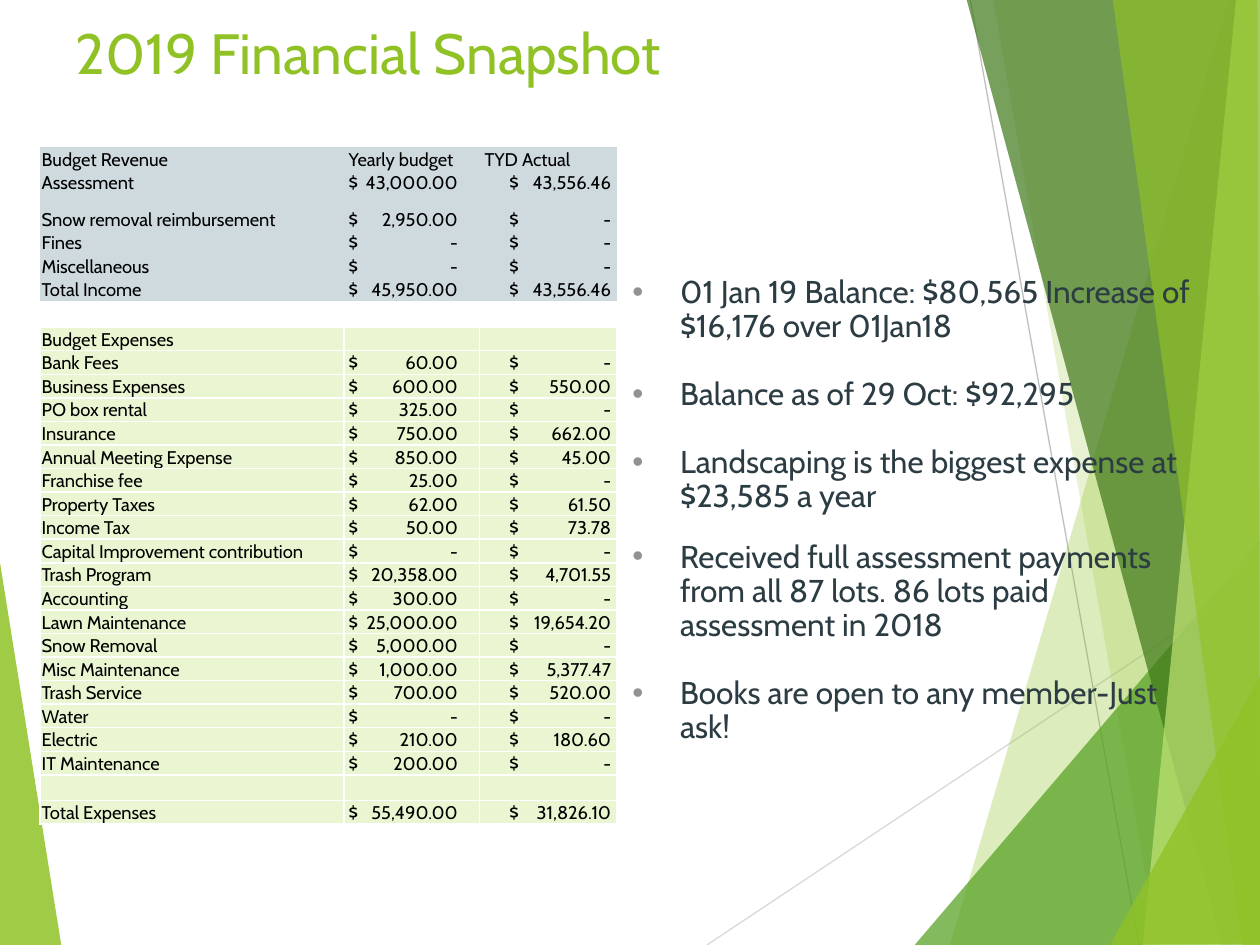
from dataclasses import dataclass

from lxml.etree import SubElement
from pptx import Presentation
from pptx.dml.color import RGBColor
from pptx.enum.shapes import MSO_CONNECTOR
from pptx.enum.text import MSO_ANCHOR
from pptx.oxml.ns import qn
from pptx.util import Cm, Pt


@dataclass(frozen=True)
class Theme:
    font: str = "Cabin"
    title_size: float = 32.4
    body_size: float = 18
    table_size: float = 10.5
    green: str = "90C226"
    mid_green: str = "54A021"
    dark_green: str = "3F7819"
    lime: str = "C0E474"
    slate: str = "2C3C43"
    bullet: str = "929292"
    black: str = "000000"
    white: str = "FFFFFF"
    revenue_fill: str = "CFDADF"
    expense_fill: str = "EAF6D1"
    pale_line: str = "D9D9D9"
    grey_line: str = "BFBFBF"


theme = Theme()


def add_xml(parent, tag, **attributes):
    return SubElement(parent, qn(tag), attributes)


def style_font(paragraph, size, color):
    paragraph.font.name = theme.font
    paragraph.font.size = Pt(size)
    paragraph.font.color.rgb = RGBColor.from_string(color)


presentation = Presentation()
presentation.slide_width, presentation.slide_height = Cm(25.4), Cm(19.05)
slide = presentation.slides.add_slide(presentation.slide_layouts[6])

# Background lines and translucent facets, back to front
background_lines = [
    ((14.25, 19.05), (25.43, 11.61), theme.pale_line),
    ((19.56, 0), (22.96, 19.05), theme.grey_line),
]
for start, end, color in background_lines:
    connector = slide.shapes.add_connector(
        MSO_CONNECTOR.STRAIGHT, *map(Cm, start), *map(Cm, end))
    connector.line.color.rgb = RGBColor.from_string(color)
    connector.line.width = Pt(0.75)
    add_xml(connector._element.spPr, "a:effectLst")

facets = [  # colour, opacity in percent, corners in centimetres
    (theme.green, 85, [(-0.03, 11.15), (1.24, 19.08), (-0.03, 19.05)]),
    (theme.green, 30, [(24.77, 0), (19.15, 19.05), (25.45, 19.08), (25.43, 0.03)]),
    (theme.green, 20, [(20.02, -0.03), (23.34, 19.05), (25.43, 19.05), (25.43, -0.03)]),
    (theme.mid_green, 72, [(18.44, 19.05), (25.4, 10.9), (25.43, 19.05)]),
    (theme.dark_green, 70, [(19.48, -0.03), (24.64, 19.05), (25.43, 19.02), (25.43, -0.03)]),
    (theme.lime, 70, [(24.92, -0.03), (23.04, 19.05), (25.43, 19.05), (25.4, -0.03)]),
    (theme.green, 65, [(22.43, -0.03), (25.04, 19.05), (25.4, 19.05), (25.35, -0.03)]),
    (theme.green, 80, [(22.38, 19.05), (25.43, 13.59), (25.43, 19.02)]),
]
for color, opacity, corners in facets:
    points = [(Cm(x), Cm(y)) for x, y in corners]
    builder = slide.shapes.build_freeform(*points[0])
    builder.add_line_segments(points[1:], close=True)
    facet = builder.convert_to_shape()
    facet.shadow.inherit = False
    facet.line.fill.background()
    facet.fill.solid()
    facet.fill.fore_color.rgb = RGBColor.from_string(color)
    fill_color = facet._element.spPr.find(qn("a:solidFill"))[0]
    add_xml(fill_color, "a:alpha", val=str(opacity * 1000))

# Title
title = slide.shapes.add_textbox(Cm(1.27), Cm(0.2), Cm(22.86), Cm(1.7))
title.text_frame.word_wrap = True
title.text_frame.vertical_anchor = MSO_ANCHOR.MIDDLE
title.text_frame.text = "2019 Financial Snapshot"
style_font(title.text_frame.paragraphs[0], theme.title_size, theme.green)

# Bulleted highlights, each with the space after it in points
highlights = [
    ("01 Jan 19 Balance: $80,565 Increase of $16,176 over 01Jan18", 19.5),
    ("Balance as of 29 Oct: $92,295", 19.5),
    ("Landscaping is the biggest expense at $23,585 a year", 15),
    ("Received full assessment payments from all 87 lots. 86 lots paid assessment in 2018", 19.5),
    ("Books are open to any member-Just ask!", 0),
]
body = slide.shapes.add_textbox(Cm(12.5), Cm(4.65), Cm(11.94), Cm(12.75))
body.text_frame.word_wrap = True
body.text_frame.margin_top = Cm(0.92)
body.text_frame.text = "\n".join(text for text, gap in highlights)
for paragraph, (text, gap) in zip(body.text_frame.paragraphs, highlights):
    properties = paragraph._p.get_or_add_pPr()
    properties.set("marL", str(Cm(0.96)))
    properties.set("indent", str(-Cm(0.96)))
    bullet_color = add_xml(properties, "a:buClr")
    add_xml(bullet_color, "a:srgbClr", val=theme.bullet)
    add_xml(properties, "a:buFont", typeface="Arial")
    add_xml(properties, "a:buChar", char="•")
    paragraph.line_spacing = 0.9
    paragraph.space_after = Pt(gap)
    style_font(paragraph, theme.body_size, theme.slate)

# Budget table
revenue = [
    ("Budget Revenue", "Yearly budget", "TYD Actual"),
    ("Assessment", "43,000.00", "43,556.46"),
    ("Snow removal reimbursement", "2,950.00", "-"),
    ("Fines", "-", "-"),
    ("Miscellaneous", "-", "-"),
    ("Total Income", "45,950.00", "43,556.46"),
]
expenses = [
    ("Budget Expenses", "", ""),
    ("Bank Fees", "60.00", "-"),
    ("Business Expenses", "600.00", "550.00"),
    ("PO box rental", "325.00", "-"),
    ("Insurance", "750.00", "662.00"),
    ("Annual Meeting Expense", "850.00", "45.00"),
    ("Franchise fee", "25.00", "-"),
    ("Property Taxes", "62.00", "61.50"),
    ("Income Tax", "50.00", "73.78"),
    ("Capital Improvement contribution", "-", "-"),
    ("Trash Program", "20,358.00", "4,701.55"),
    ("Accounting", "300.00", "-"),
    ("Lawn Maintenance", "25,000.00", "19,654.20"),
    ("Snow Removal", "5,000.00", "-"),
    ("Misc Maintenance", "1,000.00", "5,377.47"),
    ("Trash Service", "700.00", "520.00"),
    ("Water", "-", "-"),
    ("Electric", "210.00", "180.60"),
    ("IT Maintenance", "200.00", "-"),
    ("", "", ""),
    ("Total Expenses", "55,490.00", "31,826.10"),
]
blank_row = ("", "", "")
budget_rows = revenue + [blank_row] + expenses
row_height, blank_height, tall_height = Cm(0.47), Cm(0.52), Cm(0.73)
column_widths = [Cm(6.12), Cm(2.74), Cm(2.77)]
dollar_indents = [Cm(0.03), Cm(0.1), Cm(0.6)]
amount_edges = [None, Cm(2.2), Cm(2.05)]  # right tab stops, from the dollar sign

frame = slide.shapes.add_table(
    len(budget_rows), 3, Cm(0.81), Cm(2.97), sum(column_widths), row_height * len(budget_rows))
table = frame.table
table_properties = table._tbl.tblPr
table.first_row = table.horz_banding = False
no_style = "{2D5ABB26-0587-4C30-8999-92F81FD0307C}"
table_properties.find(qn("a:tableStyleId")).text = no_style
for column, width in zip(table.columns, column_widths):
    column.width = width

for row_index, values in enumerate(budget_rows):
    row = table.rows[row_index]
    row.height = row_height
    if values == blank_row:
        row.height = blank_height
    elif values[0] == "Snow removal reimbursement":
        row.height = tall_height
    for column_index, value in enumerate(values):
        cell = row.cells[column_index]
        is_amount = column_index > 0 and row_index > 0 and value != ""
        cell.margin_left = dollar_indents[column_index if is_amount else min(column_index, 1)]
        cell.margin_right = cell.margin_top = Cm(0.03)
        cell.margin_bottom = 0
        cell.vertical_anchor = MSO_ANCHOR.BOTTOM
        cell.text = f"$\t{value}" if is_amount else value
        paragraph = cell.text_frame.paragraphs[0]
        if is_amount:
            tabs = add_xml(paragraph._p.get_or_add_pPr(), "a:tabLst")
            add_xml(tabs, "a:tab", pos=str(amount_edges[column_index]), algn="r")
        style_font(paragraph, theme.table_size, theme.black)
        if not value:
            add_xml(paragraph._p, "a:endParaRPr", sz=str(int(theme.table_size * 100)))

        if row_index >= len(revenue):
            cell_properties = cell._tc.get_or_add_tcPr()
            sides = ["a:lnL", "a:lnR", "a:lnT", "a:lnB"]
            if row_index == len(revenue):
                sides.remove("a:lnT")
            for side in sides:
                border = add_xml(cell_properties, side, w=str(Pt(1)))
                add_xml(add_xml(border, "a:solidFill"), "a:srgbClr", val=theme.white)
        if row_index == len(revenue):
            cell.fill.background()
        else:
            cell.fill.solid()
            fill = theme.revenue_fill if row_index < len(revenue) else theme.expense_fill
            cell.fill.fore_color.rgb = RGBColor.from_string(fill)

presentation.save("out.pptx")
